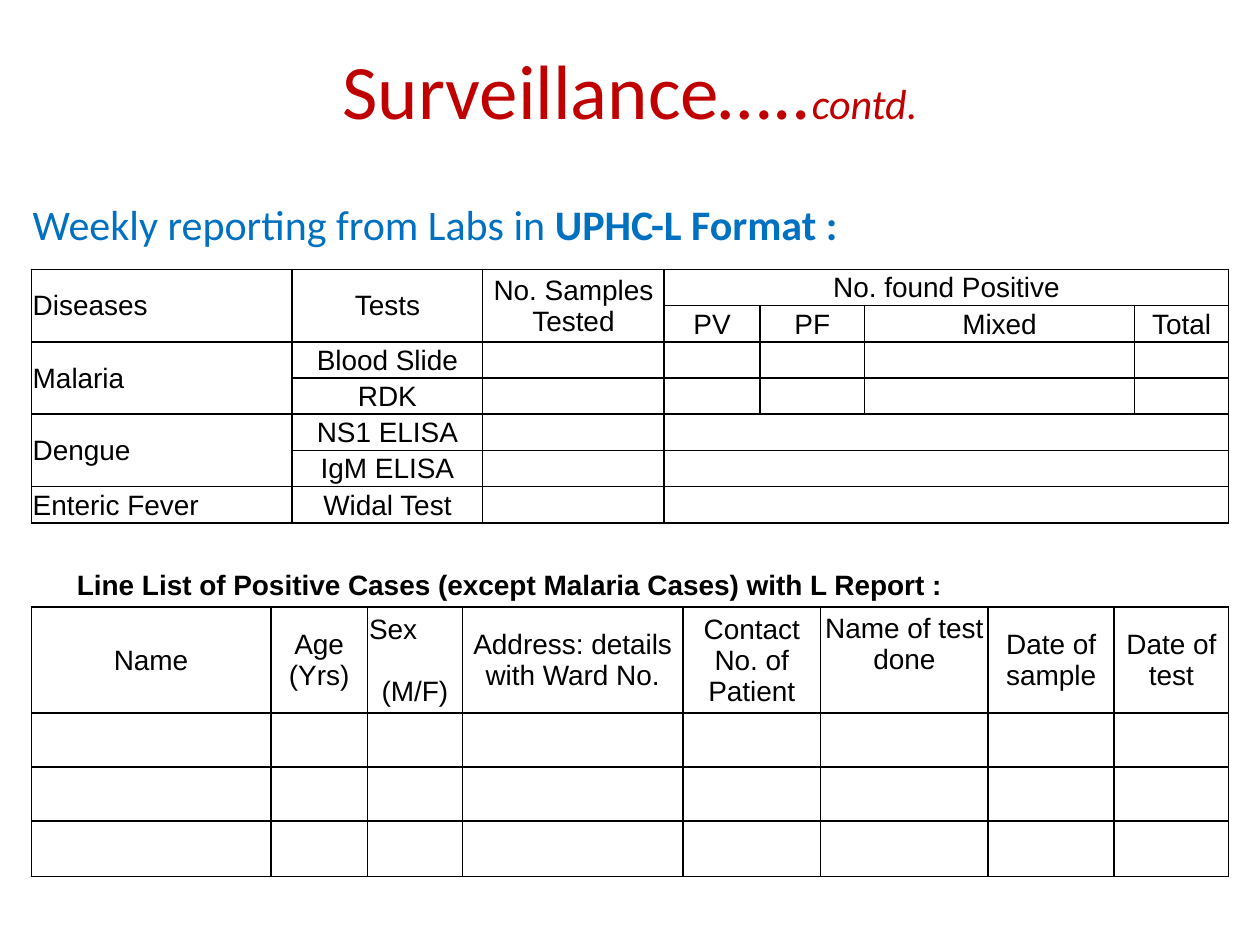
from lxml import etree
from pptx import Presentation
from pptx.dml.color import RGBColor
from pptx.enum.text import MSO_ANCHOR, PP_ALIGN
from pptx.oxml.ns import qn
from pptx.util import Cm, Pt

LEFT, CENTER = PP_ALIGN.LEFT, PP_ALIGN.CENTER
TOP, MIDDLE = MSO_ANCHOR.TOP, MSO_ANCHOR.MIDDLE
NO_STYLE_NO_GRID = "{2D5ABB26-0587-4C30-8999-92F81FD0307C}"

TITLE = {"name": "Calibri", "size": Pt(44), "color": "C00000"}
CONTD = {**TITLE, "size": Pt(24), "italic": True}
INTRO = {"name": "Calibri", "size": Pt(24), "color": "0070C0"}
BODY = {"name": "Arial", "size": Pt(16), "color": "000000"}


def add_run(paragraph, text, style):
    run = paragraph.add_run()
    run.text = text
    for key, value in style.items():
        if key == "color":
            run.font.color.rgb = RGBColor.from_string(value)
        else:
            setattr(run.font, key, value)


def draw_borders(cell):
    for side in ("a:lnL", "a:lnR", "a:lnT", "a:lnB"):
        line = etree.SubElement(cell._tc.get_or_add_tcPr(), qn(side), w=str(Pt(1)))
        fill = etree.SubElement(line, qn("a:solidFill"))
        etree.SubElement(fill, qn("a:srgbClr"), val="000000")


prs = Presentation()
prs.slide_width, prs.slide_height = Cm(25.4), Cm(19.05)
slide = prs.slides.add_slide(prs.slide_layouts[5])

title = slide.shapes.title
title.left, title.top, title.width, title.height = Cm(1.27), Cm(0.2), Cm(22.86), Cm(3.18)
title.text_frame.vertical_anchor = MIDDLE
heading = title.text_frame.paragraphs[0]
heading.alignment = CENTER
add_run(heading, "Surveillance…..", TITLE)
add_run(heading, "contd.", CONTD)

# Both forms share one grid; each row lists the columns where its cells start.
widths = [4.83, 0.43, 1.52, 0.41, 1.5, 0.41, 3.66, 0.38, 1.55, 1.22, 0.89, 2.49, 2.54, 0.41, 1.9]
positive_starts = [0, 2, 6, 7, 9, 11, 14]
result_starts = [0, 2, 6, 7]
case_starts = [0, 1, 3, 5, 8, 10, 12, 13]
rows = [
    (1.42, [0, 11, 14], []),
    (0.73, result_starts, ["Diseases", "Tests", "No. Samples Tested", "No. found Positive"]),
    (0.73, positive_starts, ["", "", "", "PV", "PF", "Mixed", "Total"]),
    (0.73, positive_starts, ["Malaria", "Blood Slide"]),
    (0.73, positive_starts, ["", "RDK"]),
    (0.73, result_starts, ["Dengue", "NS1 ELISA"]),
    (0.73, result_starts, ["", "IgM ELISA"]),
    (0.73, result_starts, ["Enteric Fever", "Widal Test"]),
    (0.81, [0, 2, 4, 6, 7, 9, 11, 12, 13], []),
    (0.89, [0, 12, 13], ["Line List of Positive Cases (except Malaria Cases) with L Report :"]),
    (2.13, case_starts, ["Name", "Age\n(Yrs)", "Sex\n(M/F)", "Address: details with Ward No.",
                         "Contact No. of Patient", "Name of test done", "Date of sample",
                         "Date of test"]),
    (1.09, case_starts, []),
    (1.09, case_starts, []),
    (1.12, case_starts, []),
]
two_row_cells = {(1, 0), (1, 2), (1, 6), (3, 0), (5, 0)}
unruled_rows = {0, 8, 9}
disease_rows = range(1, 8)
line_list_title, line_list_header = 9, 10

report = slide.shapes.add_table(len(rows), len(widths), Cm(0.63), Cm(4.01),
                                Cm(sum(widths)), Cm(sum(row[0] for row in rows))).table
report.first_row = report.horz_banding = False
report._tbl.tblPr.find(qn("a:tableStyleId")).text = NO_STYLE_NO_GRID
for column, width in zip(report.columns, widths):
    column.width = Cm(width)

cell_format = {"margin_left": Cm(0.03), "margin_right": Cm(0.03), "margin_top": Cm(0.03),
               "margin_bottom": 0, "vertical_anchor": MIDDLE}
for r, (height, starts, texts) in enumerate(rows):
    report.rows[r].height = Cm(height)
    for c in range(len(widths)):
        cell = report.cell(r, c)
        for key, value in cell_format.items():
            setattr(cell, key, value)
        if r not in unruled_rows:
            draw_borders(cell)
        cell.fill.background()

    ends = starts[1:] + [len(widths)]
    for i, (start, end) in enumerate(zip(starts, ends)):
        cell = report.cell(r, start)
        if cell.is_spanned:
            continue
        last_row = r + ((r, start) in two_row_cells)
        if last_row > r or end - start > 1:
            cell.merge(report.cell(last_row, end - 1))
        if i < len(texts) and texts[i]:
            frame = cell.text_frame
            for n, line in enumerate(texts[i].split("\n")):
                paragraph = frame.add_paragraph() if n else frame.paragraphs[0]
                paragraph.alignment = LEFT if r in disease_rows and start == 0 else CENTER
                add_run(paragraph, line, {**BODY, "bold": r == line_list_title})

intro_cell = report.cell(0, 0)
intro_cell.vertical_anchor = TOP
intro = intro_cell.text_frame.paragraphs[0]
add_run(intro, "Weekly reporting from Labs in ", INTRO)
add_run(intro, "UPHC-L Format :", {**INTRO, "bold": True})

sex = report.cell(line_list_header, 3).text_frame.paragraphs[0]
sex.alignment = LEFT
sex.space_after = Pt(18)
report.cell(line_list_header, 10).margin_bottom = Cm(0.65)

# Empty cells need the body size too, or they stretch their rows.
for cell in report.iter_cells():
    if not cell.text_frame.text:
        etree.SubElement(cell.text_frame.paragraphs[0]._p, qn("a:endParaRPr"),
                         sz=str(BODY["size"].centipoints))

prs.save("out.pptx")
